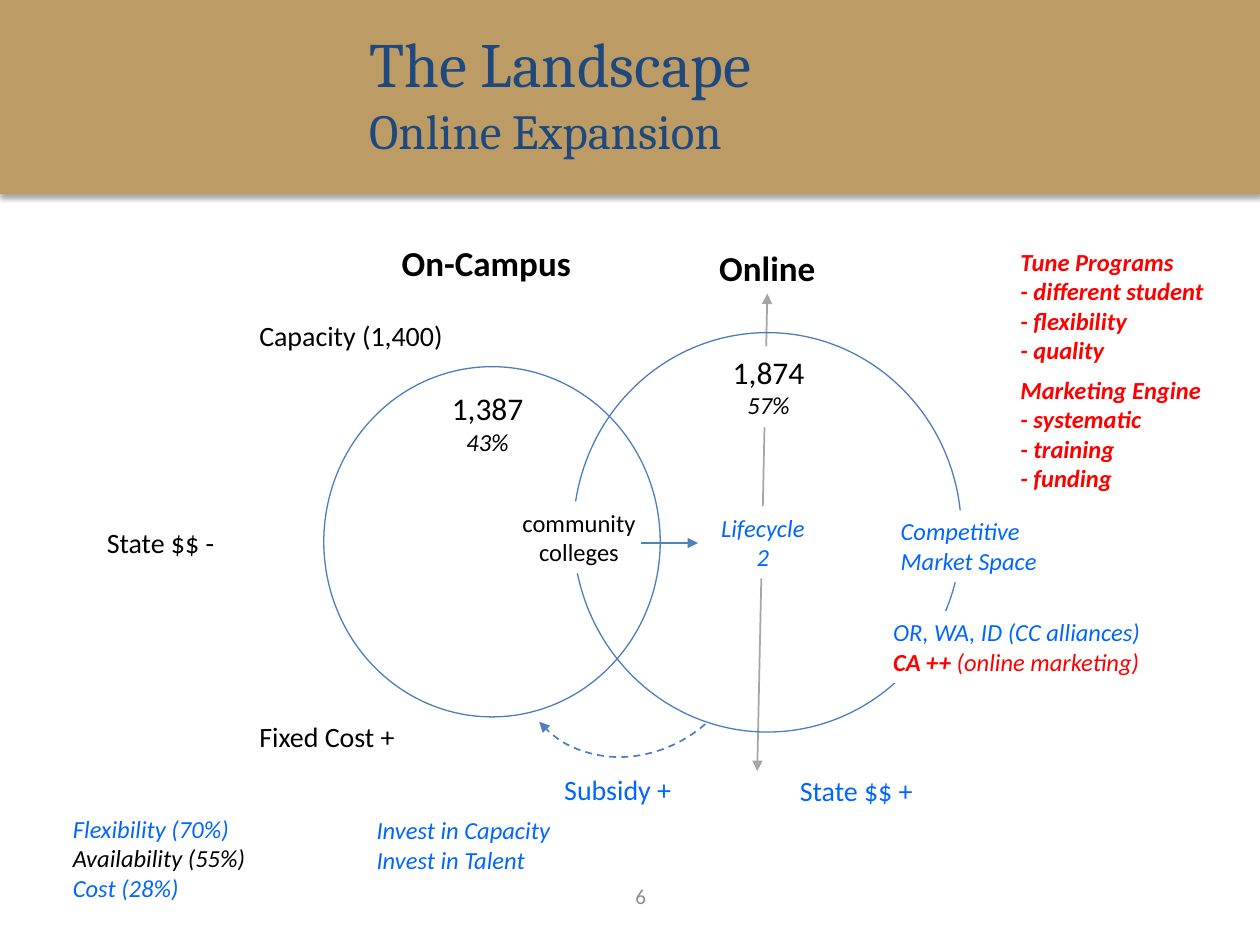
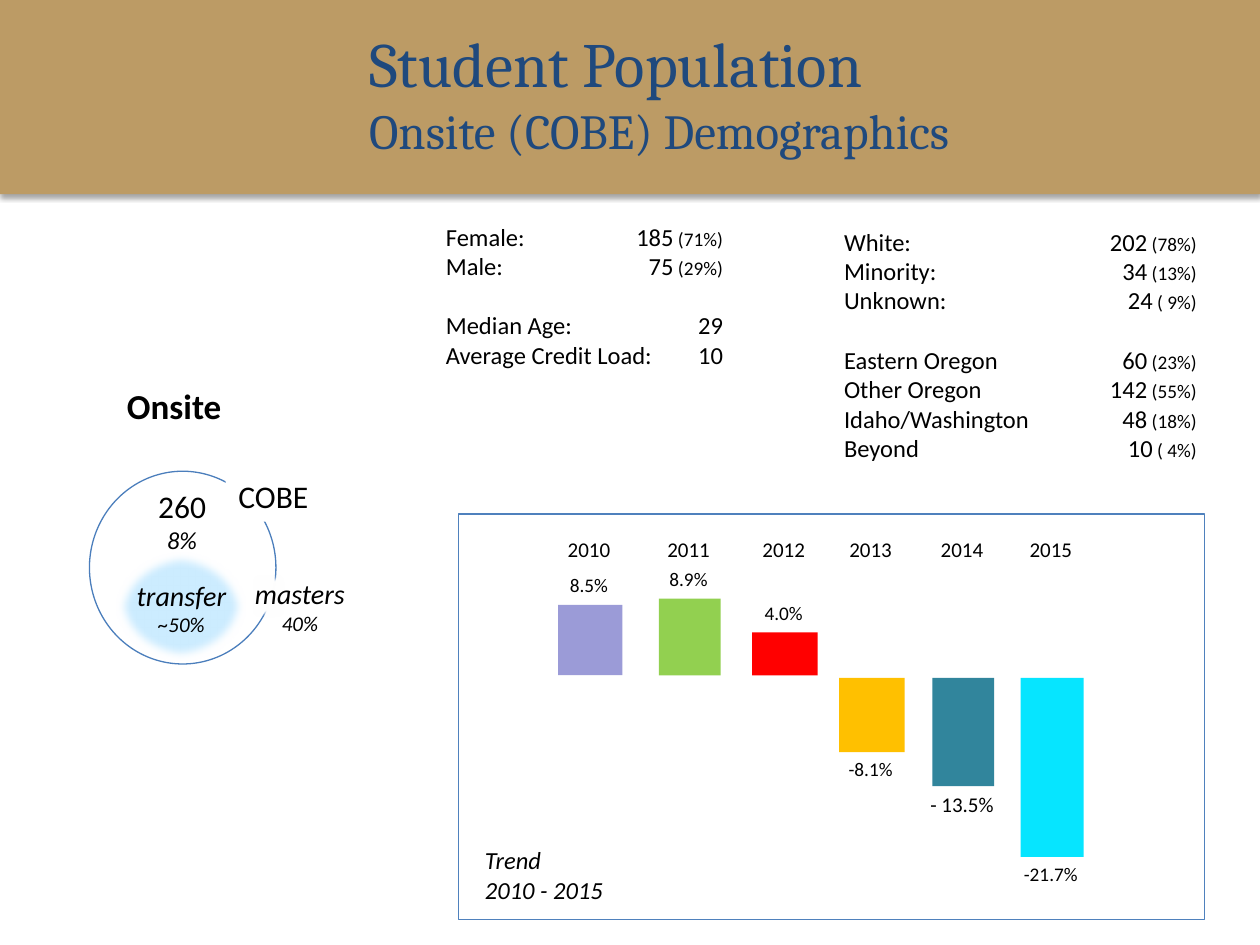
"""Build two slides on online expansion and onsite student demographics."""
import pptx
import pptx.dml.color
import pptx.enum.dml
import pptx.enum.shapes
import pptx.enum.text
import pptx.oxml
import pptx.oxml.ns
import pptx.util
from pptx.util import Inches

COLORS = {
    "band": "BC9B65", "title": "1F497D", "black": "000000", "white": "FFFFFF",
    "blue": "0066FF", "red": "FF0000", "circle": "4B7EBC", "arrow": "4F81BD",
    "axis": "A6A6A6", "number": "8C8C8C", "transfer": "CCECFF",
    "2010": "9B9BD7", "2011": "92D050", "2012": "FF0000",
    "2013": "FFC000", "2014": "31859C", "2015": "06E5FF",
}
SHAPES = pptx.enum.shapes.MSO_SHAPE
ALIGN = pptx.enum.text.PP_ALIGN
ANCHOR = pptx.enum.text.MSO_ANCHOR
AUTO_SIZE = pptx.enum.text.MSO_AUTO_SIZE
BAND_SHADOW = (
    '<a:outerShdw blurRad="39370" dist="22860" dir="5400000" rotWithShape="0">'
    '<a:srgbClr val="000000"><a:alpha val="35000"/></a:srgbClr></a:outerShdw>'
)
TREND = [
    ("2010", "8.5%", 11, 4.43, 0.51, 0.56),
    ("2011", "8.9%", 11, 5.23, 0.49, 0.61),
    ("2012", "4.0%", 11, 5.97, 0.52, 0.34),
    ("2013", "-8.1%", 11, 6.66, 0.52, 0.59),
    ("2014", "- 13.5%", 12, 7.4, 0.49, 0.86),
    ("2015", "-21.7%", 11, 8.1, 0.5, 1.42),
]


def rgb(name):
    """Return the named colour."""
    return pptx.dml.color.RGBColor.from_string(COLORS[name])


def drawing_element(markup):
    """Parse one element of the drawing namespace."""
    return pptx.oxml.parse_xml(f"<a:wrap {pptx.oxml.ns.nsdecls('a')}>{markup}</a:wrap>")[0]


def set_effect(shape, effect=""):
    """Replace the theme shadow with the given effect or with none."""
    properties = shape.element.spPr
    for old in properties.findall(pptx.oxml.ns.qn("a:effectLst")):
        properties.remove(old)
    properties.append(drawing_element(f"<a:effectLst>{effect}</a:effectLst>"))


def set_line(shape, color, width, head=False, tail=False, dashed=False):
    """Format an outline or a connector, with triangle arrowheads if wanted."""
    shape.line.color.rgb = rgb(color)
    shape.line.width = pptx.util.Pt(width)
    if dashed:
        shape.line.dash_style = pptx.enum.dml.MSO_LINE.DASH
    outline = shape.element.spPr.find(pptx.oxml.ns.qn("a:ln"))
    for end, wanted in (("headEnd", head), ("tailEnd", tail)):
        if wanted:
            outline.append(drawing_element(f'<a:{end} type="triangle"/>'))


def add_figure(slide, kind, box, fill=None, line=None, effect=""):
    """Add a preset shape with an optional fill, outline and effect."""
    shape = slide.shapes.add_shape(kind, *map(Inches, box))
    if fill:
        shape.fill.solid()
        shape.fill.fore_color.rgb = rgb(fill)
    else:
        shape.fill.background()
    if line:
        set_line(shape, line, 0.75)
    else:
        shape.line.fill.background()
    set_effect(shape, effect)
    return shape


def add_arrow(slide, start, end, color, width, head=False):
    """Add a straight arrow between two points."""
    points = map(Inches, (*start, *end))
    arrow = slide.shapes.add_connector(pptx.enum.shapes.MSO_CONNECTOR.STRAIGHT, *points)
    set_line(arrow, color, width, head=head, tail=True)
    set_effect(arrow)


def add_run(paragraph, text, size, color="black", bold=False, italic=False, font="Calibri"):
    """Add one formatted run to a paragraph."""
    run = paragraph.add_run()
    run.text = text
    run.font.name = font
    run.font.size = pptx.util.Pt(size)
    run.font.color.rgb = rgb(color)
    run.font.bold = bold
    run.font.italic = italic


def next_paragraph(frame, index):
    """Return the first paragraph of a frame, or a new one after it."""
    return frame.add_paragraph() if index else frame.paragraphs[0]


def add_label(slide, box, lines, size=14, align=ALIGN.LEFT, fill=None, **style):
    """Add unwrapped text; a line is a string or a list of (text, style) runs."""
    shape = slide.shapes.add_textbox(*map(Inches, box))
    if fill:
        shape.fill.solid()
        shape.fill.fore_color.rgb = rgb(fill)
    frame = shape.text_frame
    frame.word_wrap = False
    frame.auto_size = AUTO_SIZE.SHAPE_TO_FIT_TEXT
    for index, line in enumerate(lines):
        paragraph = next_paragraph(frame, index)
        paragraph.alignment = align
        for text, changes in [(line, {})] if isinstance(line, str) else line:
            add_run(paragraph, text, **{"size": size, **style, **changes})
    return shape


def add_figures_list(slide, box, rows, tab, group_start):
    """Add rows of a name, a right-aligned number and a small percentage."""
    shape = slide.shapes.add_textbox(*map(Inches, box))
    shape.text_frame.word_wrap = True
    for index, (name, number, percentage) in enumerate(rows):
        paragraph = next_paragraph(shape.text_frame, index)
        tabs = f'<a:tabLst><a:tab pos="{Inches(tab)}" algn="r"/></a:tabLst>'
        paragraph._p.get_or_add_pPr().append(drawing_element(tabs))
        if index == group_start:
            paragraph.space_before = pptx.util.Pt(17)
        add_run(paragraph, f"{name}\t{number}", 14)
        if percentage:
            add_run(paragraph, f" {percentage}", 11)


def add_band(slide):
    """Put the title band on the layout that the slides share."""
    band = add_figure(slide, SHAPES.RECTANGLE, (0, -0.01, 10, 1.55), "band", effect=BAND_SHADOW)
    band.element.nvSpPr.cNvPr.set("id", "99")
    slide.slide_layout.shapes.element.insert(2, band.element)


def add_titled_slide(presentation, heading, subheading):
    """Add a title-only slide with a two-line title."""
    slide = presentation.slides.add_slide(presentation.slide_layouts[5])
    title = slide.shapes.title
    title.left, title.top, title.width, title.height = map(Inches, (2.83, 0.16, 6.92, 1.14))
    frame = title.text_frame
    frame.auto_size = AUTO_SIZE.NONE
    frame.vertical_anchor = ANCHOR.MIDDLE
    for index, (text, size) in enumerate(((heading, 36), (subheading, 28))):
        paragraph = next_paragraph(frame, index)
        paragraph.alignment = ALIGN.LEFT
        add_run(paragraph, text, size, "title", font="Cambria")
    return slide


def add_count(slide, box, count, share, fill=None):
    """Add a head count with its share in italics below."""
    lines = [[(count, {"size": 18})], [(share, {"italic": True})]]
    add_label(slide, box, lines, align=ALIGN.CENTER, fill=fill)


def add_subgroup(slide, box, name, share):
    """Add the italic name of a subgroup with its share below."""
    lines = [name, [(share, {"size": 12})]]
    add_label(slide, box, lines, 16, ALIGN.CENTER, italic=True)


def fill_landscape(slide):
    """Draw the overlapping on-campus and online populations."""
    add_arrow(slide, (6.09, 2.33), (6.01, 6.12), "axis", 1, head=True)
    for box in ((2.57, 2.91, 2.67, 2.78), (4.55, 2.64, 3.08, 3.17)):
        add_figure(slide, SHAPES.OVAL, box, line="circle")
    add_label(slide, (3.09, 1.87, 1.56, 0.44), ["On-Campus"], 20, bold=True)
    add_label(slide, (5.61, 1.91, 0.97, 0.44), ["Online"], 20, bold=True)
    add_count(slide, (3.48, 3.04, 0.78, 0.64), "1,387", "43%", "white")
    add_count(slide, (5.71, 2.75, 0.78, 0.64), "1,874", "57%", "white")

    subsidy = add_figure(slide, SHAPES.ARC, (4.04, 4.21, 1.97, 1.75))
    subsidy.rotation = 139.2
    set_line(subsidy, "arrow", 1, tail=True, dashed=True)
    for text, left, top, width, color in (
        ("State $$ -", 0.75, 4.12, 1.1, "black"),
        ("Fixed Cost +", 1.96, 5.66, 1.32, "black"),
        ("Capacity (1,400)", 1.96, 2.48, 1.7, "black"),
        ("Subsidy +", 4.38, 6.08, 1.06, "blue"),
        ("State $$ +", 6.25, 6.09, 1.11, "blue"),
    ):
        add_label(slide, (left, top, width, 0.37), [text], 16, color=color)

    reasons = ["Flexibility (70%)", [("Availability (55%)", {"color": "black"})], "Cost (28%)"]
    add_label(slide, (0.48, 6.41, 1.59, 0.81), reasons, color="blue", italic=True)
    actions = ["Tune Programs", "- different student", "- flexibility", "- quality",
               "Marketing Engine", "- systematic", "- training", "- funding"]
    action_box = add_label(slide, (8, 1.91, 1.67, 2.07), actions,
                           color="red", bold=True, italic=True)
    action_box.text_frame.paragraphs[4].space_before = pptx.util.Pt(6)

    market = [("CA ++ ", {"color": "red", "bold": True}), ("(online marketing)", {"color": "red"})]
    for lines, left, top, width, align in (
        (["Competitive", "Market Space"], 7.05, 4.05, 1.29, ALIGN.LEFT),
        (["Invest in Capacity", "Invest in Talent"], 2.89, 6.42, 1.64, ALIGN.LEFT),
        (["Lifecycle", "2"], 5.62, 4.02, 0.87, ALIGN.CENTER),
        (["OR, WA, ID (CC alliances)", market], 6.99, 4.85, 2.22, ALIGN.LEFT),
    ):
        add_label(slide, (left, top, width, 0.57), lines, align=align,
                  fill="white", color="blue", italic=True)
    add_label(slide, (4.04, 3.98, 1.11, 0.57), ["community", "colleges"],
              align=ALIGN.CENTER, fill="white")
    add_arrow(slide, (5.09, 4.31), (5.54, 4.31), "arrow", 0.75)
    number = add_label(slide, (3.92, 6.91, 2.33, 0.4), ["6"], 12, ALIGN.CENTER, color="number")
    number.text_frame.auto_size = AUTO_SIZE.NONE
    number.text_frame.word_wrap = True
    number.text_frame.vertical_anchor = ANCHOR.MIDDLE


def add_trend(slide):
    """Draw the framed yearly bars above and below the zero line."""
    add_figure(slide, SHAPES.RECTANGLE, (3.64, 4.08, 5.92, 3.22), "white", "arrow")
    for year, change, size, left, width, height in TREND:
        falling = change.startswith("-")
        top = 5.38 if falling else 5.36 - height
        change_top = top + height - 0.01 if falling else top - 0.3
        center = left + width / 2
        add_figure(slide, SHAPES.RECTANGLE, (left, top, width, height), year)
        add_label(slide, (center - 0.36, 4.21, 0.7, 0.3), [year], 12, ALIGN.CENTER)
        add_label(slide, (center - 0.46, change_top, 0.9, 0.29), [change], size, ALIGN.CENTER)
    add_label(slide, (3.75, 6.66, 1.15, 0.57), ["Trend", "2010 - 2015"], italic=True)


def fill_population(slide):
    """Show the onsite group, its demographics and its trend."""
    add_trend(slide)
    add_label(slide, (0.91, 3, 0.96, 0.44), ["Onsite"], 20, bold=True)
    add_figure(slide, SHAPES.OVAL, (0.71, 3.74, 1.48, 1.53), line="circle")
    add_count(slide, (1.15, 3.82, 0.59, 0.64), "260", "8%")
    add_label(slide, (1.79, 3.74, 0.76, 0.4), ["COBE"], 18, ALIGN.CENTER, "white")
    add_figure(slide, SHAPES.OVAL, (0.92, 4.38, 1.04, 0.87), "transfer",
               effect='<a:softEdge rad="63500"/>')
    add_subgroup(slide, (0.98, 4.54, 0.92, 0.57), "transfer", "~50%")
    add_figure(slide, SHAPES.RECTANGLE, (2, 4.55, 0.27, 0.36), "white",
               effect='<a:softEdge rad="31750"/>')
    add_subgroup(slide, (1.92, 4.53, 0.92, 0.57), "masters", "40%")
    add_figures_list(slide, (3.44, 1.71, 2.61, 1.28), [
        ("Female:", "185", "(71%)"), ("Male:", "75", "(29%)"),
        ("Median Age:", "29", ""), ("Average Credit Load:", "10", ""),
    ], 2.2, 2)
    add_figures_list(slide, (6.6, 1.75, 3.08, 2.17), [
        ("White:", "202", "(78%)"), ("Minority:", "34", "(13%)"), ("Unknown:", "24", "( 9%)"),
        ("Eastern Oregon", "60", "(23%)"), ("Other Oregon", "142", "(55%)"),
        ("Idaho/Washington", "48", "(18%)"), ("Beyond", "10", "( 4%)"),
    ], 2.8, 3)


def main():
    """Build and save the presentation."""
    presentation = pptx.Presentation()
    presentation.slide_width, presentation.slide_height = Inches(10), Inches(7.5)
    landscape = add_titled_slide(presentation, "The Landscape", "Online Expansion")
    add_band(landscape)
    fill_landscape(landscape)
    population = add_titled_slide(presentation, "Student Population", "Onsite (COBE) Demographics")
    fill_population(population)
    presentation.save("out.pptx")


if __name__ == "__main__":
    main()
